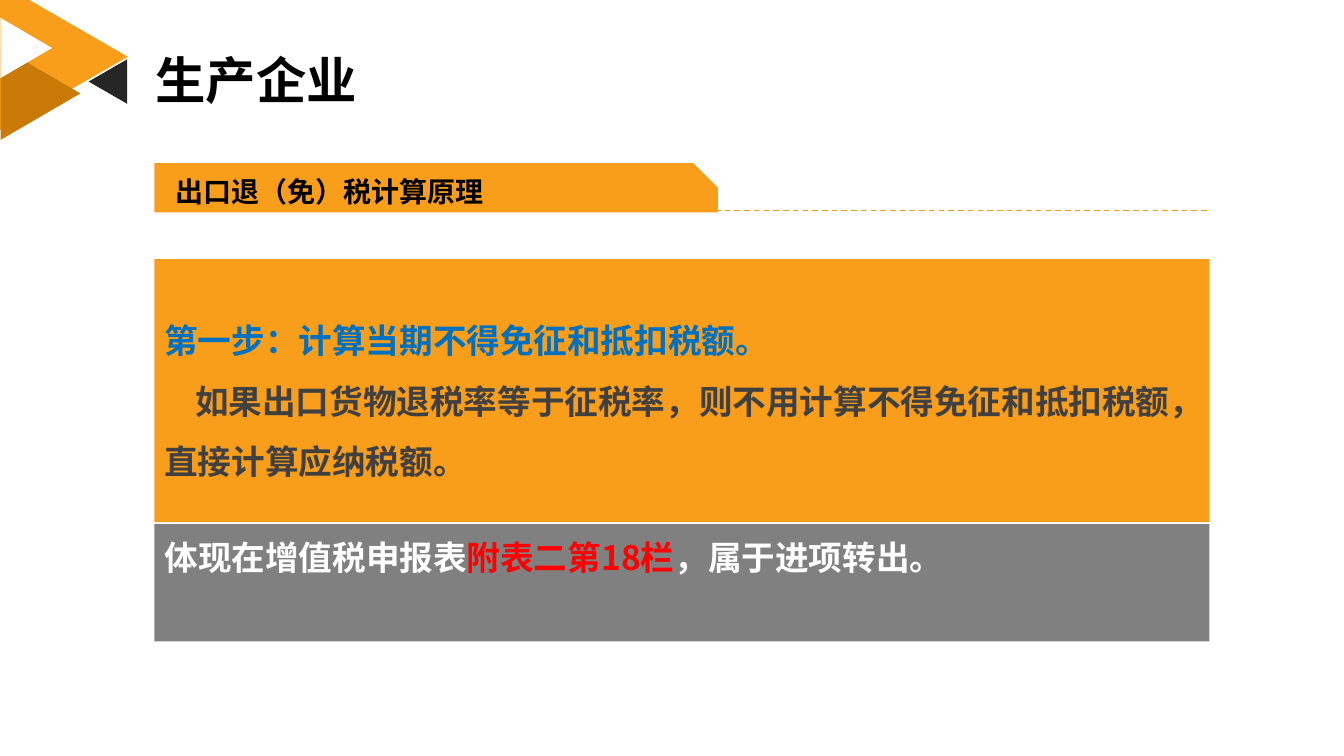
"""Builds the slide on the export tax refund calculation for manufacturers."""
from dataclasses import dataclass

from lxml import etree
from pptx import Presentation
from pptx import util as u
from pptx.dml.color import RGBColor
from pptx.enum import dml, shapes, text
from pptx.oxml.ns import qn


@dataclass(frozen=True)
class Theme:
    orange: str = "F89E1B"
    brown: str = "C87906"
    charcoal: str = "262626"
    grey: str = "808080"
    white: str = "FFFFFF"
    black: str = "000000"
    blue: str = "0070C0"
    red: str = "FF0000"
    ink: str = "404040"
    latin_title: str = "Arial"
    font: str = "Noto Sans CJK SC"
    title_size: int = 36
    label_size: int = 20
    body_size: int = 24


class SlideBuilder:
    def __init__(self, slide, theme):
        self.slide = slide
        self.theme = theme

    def place(self, shape, box):
        shape.left, shape.top, shape.width, shape.height = map(u.Cm, box)

    def paint(self, shape, color):
        shape.fill.solid()
        shape.fill.fore_color.rgb = RGBColor.from_string(color)

    def shape(self, kind, box, color, rotation=0):
        shape = self.slide.shapes.add_shape(kind, *map(u.Cm, box))
        shape.rotation = rotation
        shape.shadow.inherit = False
        shape.line.fill.background()
        self.paint(shape, color)
        return shape

    def outline(self, points, color):
        start, *rest = [(u.Cm(x), u.Cm(y)) for x, y in points]
        builder = self.slide.shapes.build_freeform(*start)
        builder.add_line_segments(rest, close=True)
        shape = builder.convert_to_shape()
        shape.shadow.inherit = False
        shape.line.fill.background()
        self.paint(shape, color)

    def dashed_line(self, left, right, top, color):
        line = self.slide.shapes.add_connector(
            shapes.MSO_CONNECTOR.STRAIGHT, *map(u.Cm, (left, top, right, top)))
        line.line.color.rgb = RGBColor.from_string(color)
        line.line.width = u.Pt(1)
        line.line.dash_style = dml.MSO_LINE.DASH
        etree.SubElement(line._element.spPr, qn("a:effectLst"))

    def set_text(self, shape, paragraphs, size, anchor, spacing=1.0, font=None, wrap=True):
        frame = shape.text_frame
        frame.word_wrap = wrap
        frame.auto_size = text.MSO_AUTO_SIZE.NONE
        frame.vertical_anchor = anchor
        frame.text = "\n".join("".join(part for part, _ in parts) for parts in paragraphs)
        for paragraph, parts in zip(frame.paragraphs, paragraphs):
            paragraph.alignment = text.PP_ALIGN.LEFT
            paragraph.line_spacing = spacing
            paragraph.space_before = u.Pt(0)
            paragraph.clear()
            for part, color in parts:
                run = paragraph.add_run()
                run.text = part
                run.font.size = u.Pt(size)
                run.font.bold = True
                run.font.name = font or self.theme.font
                run.font.color.rgb = RGBColor.from_string(color)
                east_asian = etree.Element(qn("a:ea"), typeface=self.theme.font)
                run.font._element.find(qn("a:latin")).addnext(east_asian)
        return frame.paragraphs

    def title(self, wording, box):
        title = self.slide.shapes.title
        self.place(title, box)
        self.set_text(title, [[(wording, self.theme.black)]], self.theme.title_size,
                      text.MSO_ANCHOR.MIDDLE, 0.9, self.theme.latin_title)

    def body(self, parts, box, color):
        body = self.slide.placeholders[1]
        self.place(body, box)
        self.paint(body, color)
        paragraph, = self.set_text(body, [parts], self.theme.body_size,
                                   text.MSO_ANCHOR.TOP, 1.2)
        paragraph.space_before = u.Pt(10)
        properties = paragraph._p.get_or_add_pPr()
        properties.set("marL", "0")
        properties.set("indent", "0")
        etree.SubElement(properties, qn("a:buNone"))

    def panel(self, paragraphs, box, color, indent):
        panel = self.shape(shapes.MSO_SHAPE.RECTANGLE, box, color)
        lines = self.set_text(panel, paragraphs, self.theme.body_size,
                              text.MSO_ANCHOR.MIDDLE, 1.5)
        lines[-1]._p.get_or_add_pPr().set("indent", str(int(u.Cm(indent))))

    def label(self, wording, box):
        label = self.slide.shapes.add_textbox(*map(u.Cm, box))
        self.set_text(label, [[(wording, self.theme.black)]], self.theme.label_size,
                      text.MSO_ANCHOR.TOP, wrap=False)


def main():
    theme = Theme()
    presentation = Presentation()
    presentation.slide_width, presentation.slide_height = u.Cm(33.87), u.Cm(19.05)
    slide = presentation.slides.add_slide(presentation.slide_layouts[1])
    builder = SlideBuilder(slide, theme)
    left, width = 3.89, 26.59

    builder.outline([(0, 0), (0.74, 0), (3.22, 1.43), (0, 3.28)], theme.orange)
    for box, color, rotation in [
        ((-0.15, 1.35, 2.34, 2.01), theme.brown, 90),
        ((2.16, 1.57, 1.12, 0.97), theme.charcoal, 270),
        ((-0.1, 0.56, 1.52, 1.3), theme.white, 90),
    ]:
        builder.shape(shapes.MSO_SHAPE.ISOSCELES_TRIANGLE, box, color, rotation)

    builder.title("生产企业", (3.66, 1.14, 26.26, 1.93))
    builder.panel([
        [("第一步：计算当期不得免征和抵扣税额。", theme.blue)],
        [("如果出口货物退税率等于征税率，则不用计算不得免征和抵扣税额，直接计算应纳税额。",
          theme.ink)],
    ], (left, 6.53, width, 6.63), theme.orange, 0.78)
    builder.body([
        ("体现在增值税申报表", theme.white),
        ("附表二第18栏", theme.red),
        ("，属于进项转出。", theme.white),
    ], (left, 13.21, width, 2.95), theme.grey)

    tab = builder.shape(shapes.MSO_SHAPE.SNIP_1_RECTANGLE,
                        (left, 4.11, 14.2, 1.24), theme.orange)
    tab.adjustments[0] = 0.5
    builder.dashed_line(8.71, left + width, 5.31, theme.orange)
    builder.label("出口退（免）税计算原理", (4.17, 4.27, 8.36, 1.12))
    presentation.save("out.pptx")


if __name__ == "__main__":
    main()
